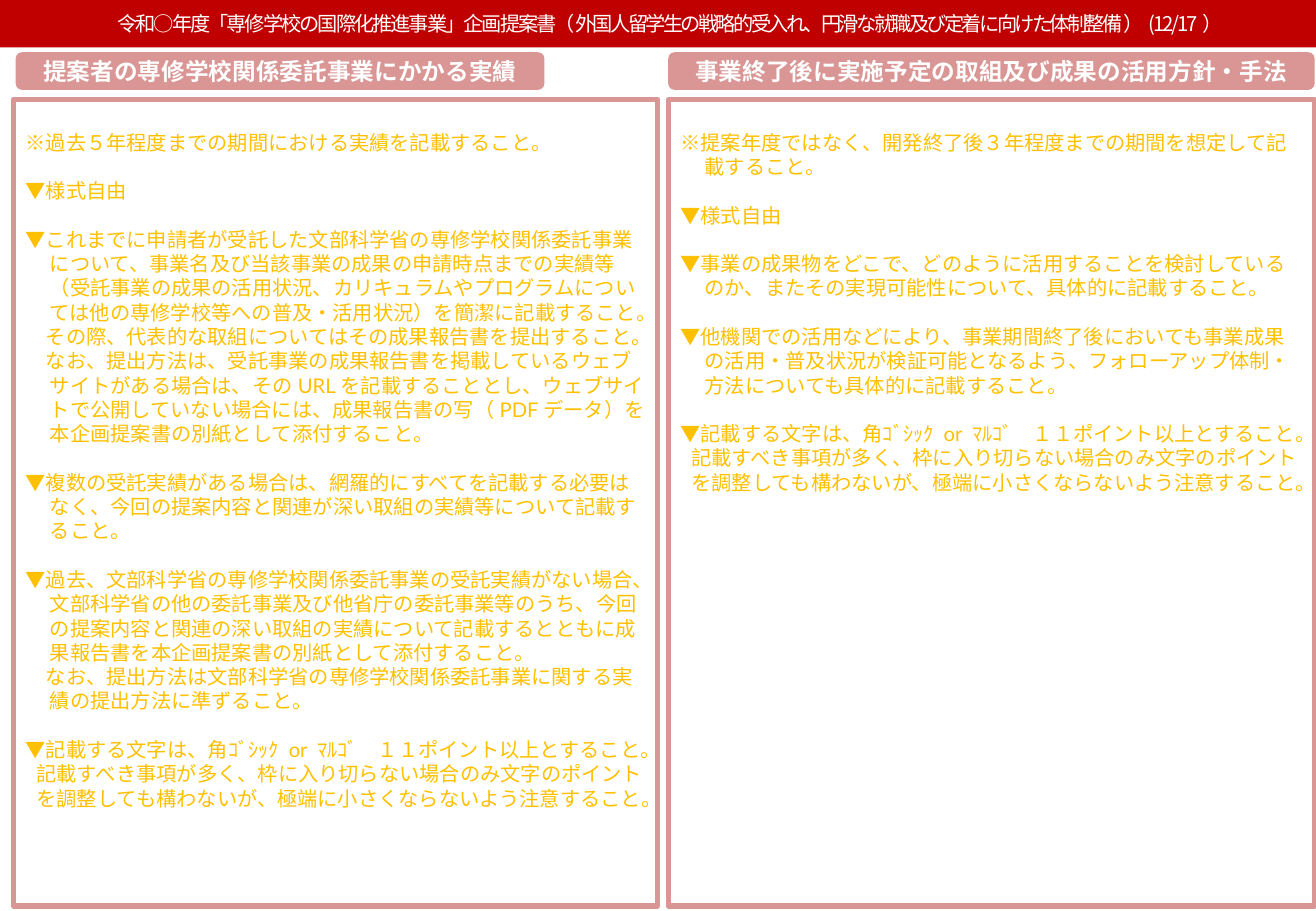
from lxml.etree import SubElement
from pptx import Presentation
from pptx.dml.color import RGBColor
from pptx.enum.shapes import MSO_SHAPE
from pptx.enum.text import MSO_ANCHOR, MSO_AUTO_SIZE, PP_ALIGN
from pptx.oxml.ns import qn
from pptx.util import Inches, Pt

ROUND = MSO_SHAPE.ROUNDED_RECTANGLE
MID, TOP = MSO_ANCHOR.MIDDLE, MSO_ANCHOR.TOP
FIXED = MSO_AUTO_SIZE.NONE
CENTER, LEFT = PP_ALIGN.CENTER, PP_ALIGN.LEFT

WIDE, HIGH = Inches(10.83), Inches(7.5)
COLORS = {"band": "C00000", "rose": "D99694", "text": "FFC000", "white": "FFFFFF"}
LATIN, KANJI = "Lato", "Noto Sans CJK JP"
LINE = Pt(14.4)

# Shares of the slide in percent: left and width, then top and height
COLS = [(1.02, 48.94), (50.78, 49.12)]
TABS = [(1.2, 40.17), (50.78, 49.12)]
BAND_ROW, TAB_ROW, BODY_ROW = (0, 5.2), (5.73, 4.13), (10.93, 88.53)

TITLE = [
    ("令和○年度「専修学校の国際化推進事業」企画提案書（", KANJI, -120),
    ("外国人留学生の戦略的受入れ、円滑な就職及び定着に向けた体制整備", KANJI, -160),
    ("）(12/17）", KANJI, -120),
]
HEADS = [
    "提案者の専修学校関係委託事業にかかる実績",
    "事業終了後に実施予定の取組及び成果の活用方針・手法",
]
FREE = ["▼様式自由"]
# Each inner list is a block of paragraphs, set apart by one line
BLOCKS = [
    [
        ["※過去５年程度までの期間における実績を記載すること。"],
        FREE,
        [
            "▼これまでに申請者が受託した文部科学省の専修学校関係委託事業について、事業名及び当該事業の成果の申請時点までの実績等（受託事業の成果の活用状況、カリキュラムやプログラムについては他の専修学校等への普及・活用状況）を簡潔に記載すること。",
            "　その際、代表的な取組についてはその成果報告書を提出すること。",
            "　なお、提出方法は、受託事業の成果報告書を掲載しているウェブサイトがある場合は、そのURLを記載することとし、ウェブサイトで公開していない場合には、成果報告書の写（PDFデータ）を本企画提案書の別紙として添付すること。",
        ],
        ["▼複数の受託実績がある場合は、網羅的にすべてを記載する必要はなく、今回の提案内容と関連が深い取組の実績等について記載すること。"],
        [
            "▼過去、文部科学省の専修学校関係委託事業の受託実績がない場合、文部科学省の他の委託事業及び他省庁の委託事業等のうち、今回の提案内容と関連の深い取組の実績について記載するとともに成果報告書を本企画提案書の別紙として添付すること。",
            "　なお、提出方法は文部科学省の専修学校関係委託事業に関する実績の提出方法に準ずること。",
        ],
    ],
    [
        ["※提案年度ではなく、開発終了後３年程度までの期間を想定して記載すること。"],
        FREE,
        ["▼事業の成果物をどこで、どのように活用することを検討しているのか、またその実現可能性について、具体的に記載すること。"],
        ["▼他機関での活用などにより、事業期間終了後においても事業成果の活用・普及状況が検証可能となるよう、フォローアップ体制・方法についても具体的に記載すること。"],
    ],
]
NOTE = [
    ("▼記載する文字は、角ｺﾞｼｯｸ or ﾏﾙｺﾞ　１１ポイント以上とすること。", LATIN, 0),
    ("記載すべき事項", KANJI, 0),
    ("が多く、枠に入り切らない場合のみ文字のポイントを調整しても構わないが、極端に小さくならないよう注意すること。", LATIN, 0),
]


def color(name):
    return RGBColor.from_string(COLORS[name])


def apply(item, **form):
    for key, value in form.items():
        setattr(item, key, value)


def box(col, row):
    """Turn percent shares into left, top, width and height."""
    (x, w), (y, h) = col, row
    return [int(side * share / 100)
            for side, share in zip((WIDE, HIGH, WIDE, HIGH), (x, y, w, h))]


def place(shape, col, row):
    apply(shape, **dict(zip(("left", "top", "width", "height"), box(col, row))))


def paint(shape, name):
    shape.fill.solid()
    shape.fill.fore_color.rgb = color(name)
    shape.line.fill.background()


def write(para, runs, tint, **form):
    """Add (text, font, spacing) runs, with one font for all scripts."""
    for text, face, gap in runs:
        run = para.add_run()
        run.text = text
        apply(run.font, name=face, **form)
        run.font.color.rgb = color(tint)
        props = run._r.get_or_add_rPr()
        SubElement(props, qn("a:ea")).set("typeface", face)
        if gap:
            props.set("spc", str(gap))


def add_band(title):
    place(title, (0, 100), BAND_ROW)
    paint(title, "band")
    frame = title.text_frame
    apply(frame, auto_size=FIXED, vertical_anchor=MID, word_wrap=True,
          margin_left=Inches(0.2), margin_right=0)
    para = frame.paragraphs[0]
    para.alignment = CENTER
    write(para, TITLE, "white", size=Pt(12))


def add_tab(slide, col, text):
    tab = slide.shapes.add_shape(ROUND, *box(col, TAB_ROW))
    tab.shadow.inherit = False
    paint(tab, "rose")
    frame = tab.text_frame
    apply(frame, vertical_anchor=MID, word_wrap=True)
    para = frame.paragraphs[0]
    para.alignment = CENTER
    write(para, [(text, LATIN, 0)], "white", size=Pt(14), bold=True)


def add_para(para, runs, gap, hang):
    apply(para, alignment=LEFT, space_before=gap, space_after=0)
    write(para, runs, "text", size=Pt(12))
    props = para._p.get_or_add_pPr()
    props.set("marL", str(hang))
    props.set("indent", str(-hang))
    SubElement(props, qn("a:buNone"))


def add_body(body, col, blocks):
    place(body, col, BODY_ROW)
    body.line.color.rgb = color("rose")
    body.line.width = Pt(3)
    frame = body.text_frame
    apply(frame, auto_size=FIXED, vertical_anchor=TOP, word_wrap=True,
          margin_top=Inches(0.05) + LINE)
    rows = [([(text, LATIN, 0)], 0 if spot else LINE, Inches(0.2))
            for block in blocks for spot, text in enumerate(block)]
    rows.append((NOTE, LINE, Inches(0.09)))
    for spot, (runs, gap, hang) in enumerate(rows):
        para = frame.add_paragraph() if spot else frame.paragraphs[0]
        add_para(para, runs, gap if spot else 0, hang)


def main():
    deck = Presentation()
    apply(deck, slide_width=WIDE, slide_height=HIGH)
    slide = deck.slides.add_slide(deck.slide_layouts[3])
    title, *bodies = slide.placeholders
    add_band(title)
    for col, tab, head, body, blocks in zip(COLS, TABS, HEADS, bodies, BLOCKS):
        add_tab(slide, tab, head)
        add_body(body, col, blocks)
    deck.save("out.pptx")


if __name__ == "__main__":
    main()
